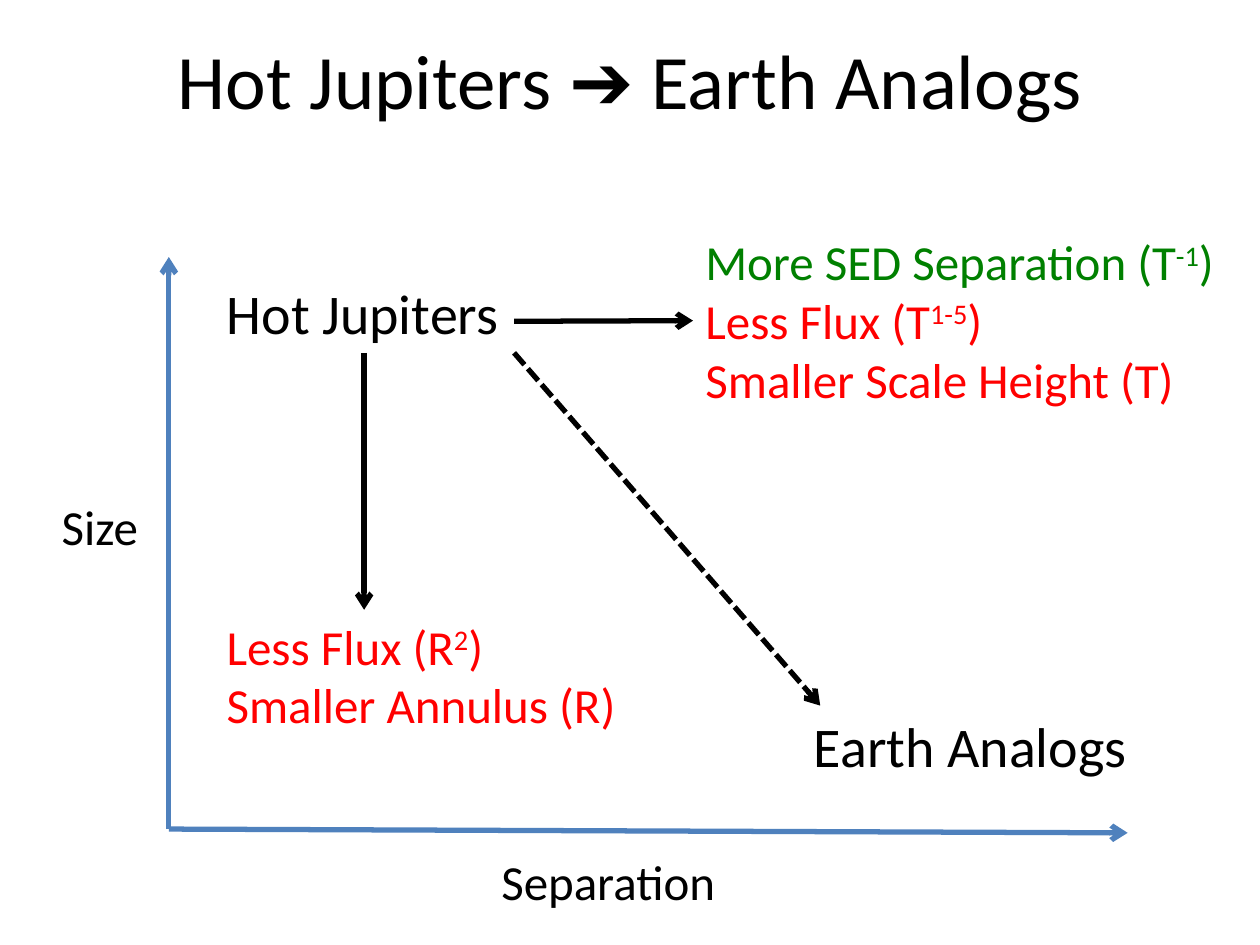
from pptx import Presentation
from pptx.dml.color import RGBColor
from pptx.enum.dml import MSO_LINE
from pptx.enum.shapes import MSO_CONNECTOR
from pptx.enum.text import MSO_ANCHOR, MSO_AUTO_SIZE, PP_ALIGN
from pptx.oxml.ns import qn
from pptx.util import Inches, Pt
from lxml.etree import SubElement

BLACK, BLUE, GREEN, RED = "000000", "4F81BD", "008000", "FF0000"
TOP, LEFT, BOTTOM, RIGHT = range(4)


def color(hex_code):
    return RGBColor.from_string(hex_code)


class DiagramPage:
    font_name = "Calibri"
    symbol_font = "Arial"
    line_width = Pt(3)

    def __init__(self, deck):
        self.page = deck.slides.add_slide(deck.slide_layouts[5])

    def style(self, font, size, hex_code):
        font.size = Pt(size)
        font.color.rgb = color(hex_code)

    def title(self, spans):
        """Fill the title from (text, font name) pairs."""
        box = self.page.shapes.title
        box.left, box.top = Inches(0), Inches(0)
        box.width, box.height = Inches(10), Inches(1.25)
        box.text_frame.vertical_anchor = MSO_ANCHOR.MIDDLE
        para = box.text_frame.paragraphs[0]
        para.alignment = PP_ALIGN.CENTER
        self.style(para.font, 44, BLACK)
        for text, font_name in spans:
            span = para.add_run()
            span.text = text
            span.font.name = font_name

    def label(self, left, top, width, height, lines, size=28):
        """Add (text, colour) lines; text between two ^ marks is superscript."""
        box = self.page.shapes.add_textbox(
            Inches(left), Inches(top), Inches(width), Inches(height))
        frame = box.text_frame
        frame.word_wrap = False
        frame.auto_size = MSO_AUTO_SIZE.SHAPE_TO_FIT_TEXT
        for number, (text, hex_code) in enumerate(lines):
            para = frame.add_paragraph() if number else frame.paragraphs[0]
            self.style(para.font, size, hex_code)
            para.font.name = self.font_name
            for index, part in enumerate(text.split("^")):
                span = para.add_run()
                span.text = part
                if index % 2:
                    span._r.get_or_add_rPr().set("baseline", "30000")
        return box

    def arrow(self, start, end, hex_code=BLACK, dash=None):
        connector = self.page.shapes.add_connector(
            MSO_CONNECTOR.STRAIGHT, *map(Inches, start + end))
        line = connector.line
        line.color.rgb = color(hex_code)
        line.width = self.line_width
        if dash:
            line.dash_style = dash
        properties = connector._element.spPr
        SubElement(properties.find(qn("a:ln")), qn("a:tailEnd"), type="arrow")
        SubElement(properties, qn("a:effectLst"))
        return connector


def main():
    deck = Presentation()
    deck.slide_width, deck.slide_height = Inches(10), Inches(7.5)
    diagram = DiagramPage(deck)
    diagram.title([("Hot Jupiters ", diagram.font_name),
                   ("➔", diagram.symbol_font),
                   (" Earth Analogs", diagram.font_name)])

    axis_origin = (1.34, 6.58)
    diagram.arrow(axis_origin, (8.95, 6.61), BLUE)
    diagram.label(3.88, 6.71, 1.92, 0.57, [("Separation", BLACK)])
    diagram.arrow(axis_origin, (1.34, 2.04), BLUE)
    diagram.label(0.39, 3.89, 0.81, 0.57, [("Size", BLACK)])

    hot_jupiters = diagram.label(1.7, 2.16, 2.38, 0.64,
                                 [("Hot Jupiters", BLACK)], size=32)
    diagram.label(6.36, 5.6, 2.71, 0.64, [("Earth Analogs", BLACK)], size=32)
    wider_orbit = diagram.label(5.5, 1.79, 4.31, 1.51, [
        ("More SED Separation (T^-1^)", GREEN),
        ("Less Flux (T^1-5^)", RED),
        ("Smaller Scale Height (T)", RED)])
    diagram.label(1.7, 4.84, 3.32, 1.04, [
        ("Less Flux (R^2^)", RED),
        ("Smaller Annulus (R)", RED)])

    diagram.arrow((4.08, 2.55), (5.5, 2.55)).end_connect(wider_orbit, LEFT)
    diagram.arrow((2.89, 2.8), (2.89, 4.84)).begin_connect(hot_jupiters, BOTTOM)
    diagram.arrow((4.08, 2.8), (6.51, 5.6), dash=MSO_LINE.SQUARE_DOT)

    deck.save("out.pptx")


if __name__ == "__main__":
    main()
